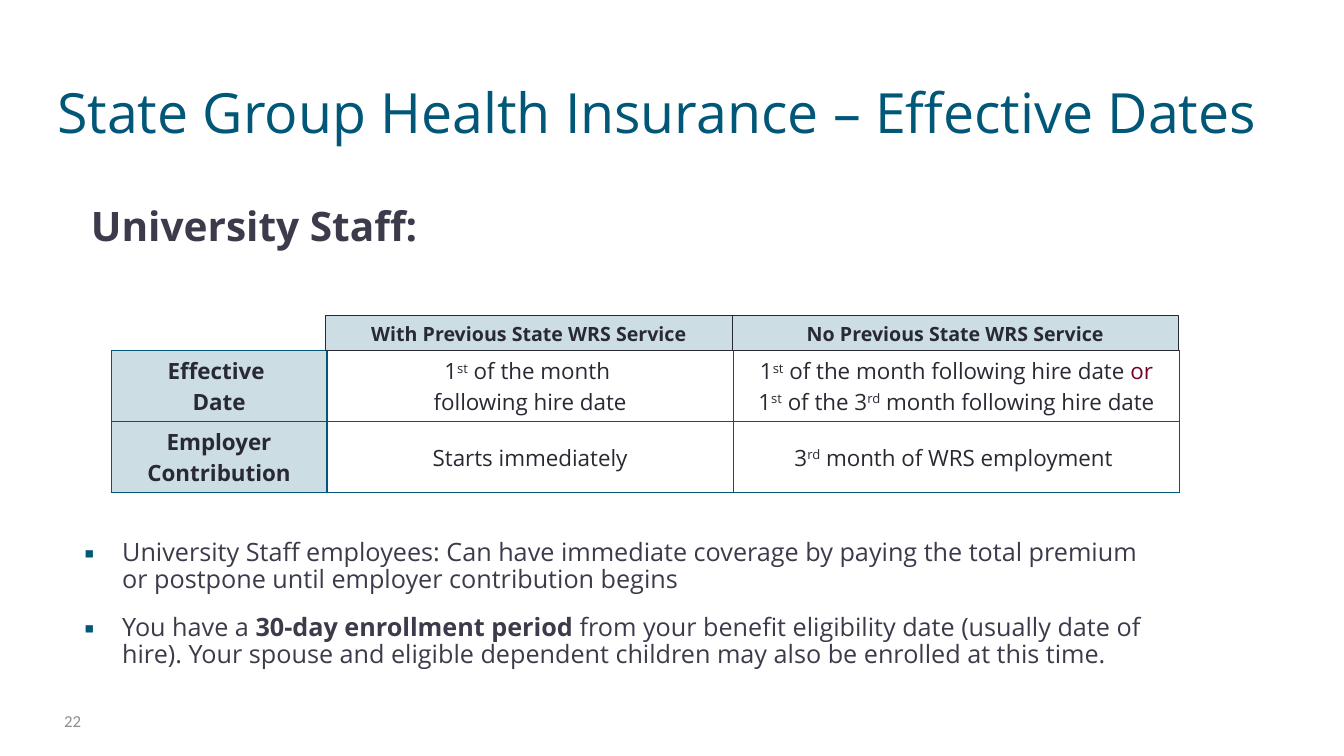
from lxml.etree import SubElement
from pptx import Presentation
from pptx.dml.color import RGBColor
from pptx.enum.shapes import MSO_SHAPE as Preset
from pptx.enum.text import MSO_ANCHOR as Anchor, PP_ALIGN as Align
from pptx.oxml.ns import qn
from pptx.util import Cm, Pt

TEAL, INK, SLATE, PALE = "005777", "292934", "3B3B4B", "CCDDE4"
MAROON, GRAY = "730026", "8E8E90"

SLIDE_SIZE = (33.87, 19.05)
TITLE = "State Group Health Insurance – Effective Dates"
STAFF_GROUP = "University Staff:"
PAGE = "22"
SERVICE_HEADERS = ["With Previous State WRS Service", "No Previous State WRS Service"]

BOLD, RAISED, ACCENT = {"bold": True}, {"raised": True}, {"color": MAROON}
ST, RD = ("st", RAISED), ("rd", RAISED)
COVERAGE_ROWS = [
    [
        [[("Effective ", BOLD)], [("Date", BOLD)]],
        [["1", ST, " of the month "], ["following hire date"]],
        [["1", ST, " of the month following hire date ", ("or", ACCENT)],
         ["1", ST, " of the 3", RD, " month following hire date"]],
    ],
    [
        [[("Employer Contribution", BOLD)]],
        [["Starts immediately"]],
        [["3", RD, " month of WRS employment "]],
    ],
]
ENROLLMENT_NOTES = [
    ["University Staff employees: Can have immediate coverage by paying the total "
     "premium or postpone until employer contribution begins"],
    ["You have a ", ("30-day enrollment period ", BOLD),
     "from your benefit eligibility date (usually date of hire). Your spouse and "
     "eligible dependent children may also be enrolled at this time."],
]

TABLE_LEFT, TABLE_TOP, ROW_HEIGHT = 2.8, 8.84, 1.79
COLUMN_WIDTHS = [5.44, 10.24, 11.25]
HEADER_HEIGHT = 0.88


def rgb(code):
    return RGBColor.from_string(code)


def apply(target, values):
    for name, value in values.items():
        setattr(target, name, value)


def write(frame, paragraphs, size, color, font="Open Sans", bold=False, bullet=None, **layout):
    for index, parts in enumerate(paragraphs):
        paragraph = frame.paragraphs[0] if index == 0 else frame.add_paragraph()
        if bullet:
            add_bullet(paragraph, bullet)
        apply(paragraph, layout)
        if index == 0:
            paragraph.space_before = Pt(0)
        for part in parts:
            text, style = (part, {}) if isinstance(part, str) else part
            run = paragraph.add_run()
            run.text = text
            apply(run.font, {"name": font, "size": Pt(size), "bold": style.get("bold", bold)})
            run.font.color.rgb = rgb(style.get("color", color))
            if style.get("raised"):
                run.font._element.set("baseline", "30000")


def add_bullet(paragraph, mark):
    properties = paragraph._p.get_or_add_pPr()
    properties.set("marL", str(Cm(0.95)))
    properties.set("indent", str(Cm(-0.95)))
    tint = SubElement(properties, qn("a:buClr"))
    SubElement(tint, qn("a:srgbClr"), val=TEAL)
    SubElement(properties, qn("a:buFont"), typeface="Open Sans")
    SubElement(properties, qn("a:buChar"), char=mark)


def add_text(slide, place, paragraphs, size, color, frame_format=None, **style):
    frame = slide.shapes.add_textbox(*map(Cm, place)).text_frame
    apply(frame, {"word_wrap": True, **(frame_format or {})})
    write(frame, paragraphs, size, color, **style)


def add_borders(cell):
    properties = cell._tc.get_or_add_tcPr()
    for position, side in enumerate(["lnL", "lnR", "lnT", "lnB"]):
        line = properties.makeelement(qn("a:" + side), {"w": str(Pt(1))})
        fill = SubElement(line, qn("a:solidFill"))
        SubElement(fill, qn("a:srgbClr"), val=TEAL)
        properties.insert(position, line)


def add_coverage_table(slide):
    table = slide.shapes.add_table(
        len(COVERAGE_ROWS), len(COLUMN_WIDTHS), Cm(TABLE_LEFT), Cm(TABLE_TOP),
        Cm(sum(COLUMN_WIDTHS)), Cm(ROW_HEIGHT * len(COVERAGE_ROWS))).table
    apply(table, {"first_row": False, "horz_banding": False})
    for column, width in zip(table.columns, COLUMN_WIDTHS):
        column.width = Cm(width)
    for r, row in enumerate(COVERAGE_ROWS):
        table.rows[r].height = Cm(ROW_HEIGHT)
        for c, paragraphs in enumerate(row):
            cell = table.cell(r, c)
            cell.vertical_anchor = Anchor.MIDDLE
            if c == 0:
                cell.fill.solid()
                cell.fill.fore_color.rgb = rgb(PALE)
            else:
                cell.fill.background()
            add_borders(cell)
            write(cell.text_frame, paragraphs, 16, INK, alignment=Align.CENTER)


def add_service_headers(slide):
    left = TABLE_LEFT + COLUMN_WIDTHS[0] - 0.03
    for label, width in zip(SERVICE_HEADERS, COLUMN_WIDTHS[1:]):
        header = slide.shapes.add_shape(
            Preset.RECTANGLE, Cm(left), Cm(TABLE_TOP - HEADER_HEIGHT), Cm(width), Cm(HEADER_HEIGHT))
        header.shadow.inherit = False
        header.fill.solid()
        header.fill.fore_color.rgb = rgb(PALE)
        header.line.color.rgb = rgb(INK)
        header.line.width = Pt(0.75)
        apply(header.text_frame, {"word_wrap": True, "vertical_anchor": Anchor.MIDDLE,
                                  "margin_top": 0, "margin_bottom": 0})
        write(header.text_frame, [[label]], 14, INK, bold=True, alignment=Align.CENTER)
        left += width


def main():
    deck = Presentation()
    deck.slide_width, deck.slide_height = map(Cm, SLIDE_SIZE)
    slide = deck.slides.add_slide(deck.slide_layouts[6])
    add_text(slide, (1.19, 0.46, 32.49, 3.18), [[TITLE]], 39.6, TEAL,
             {"vertical_anchor": Anchor.BOTTOM, "margin_bottom": 0})
    add_text(slide, (1.88, 13.49, 27.51, 2.74), ENROLLMENT_NOTES, 18, SLATE,
             bullet="▪", line_spacing=0.88, space_before=Pt(3.6), space_after=Pt(12))
    add_text(slide, (1.37, 17.65, 1.42, 1.02), [[PAGE]], 12, GRAY,
             {"vertical_anchor": Anchor.MIDDLE}, font="Calibri")
    add_text(slide, (1.88, 4.27, 31.14, 4.57), [[STAFF_GROUP]], 29, SLATE,
             {"margin_top": Cm(0.79), "margin_left": Cm(0.41)}, bold=True)
    add_coverage_table(slide)
    add_service_headers(slide)
    deck.save("out.pptx")


if __name__ == "__main__":
    main()
